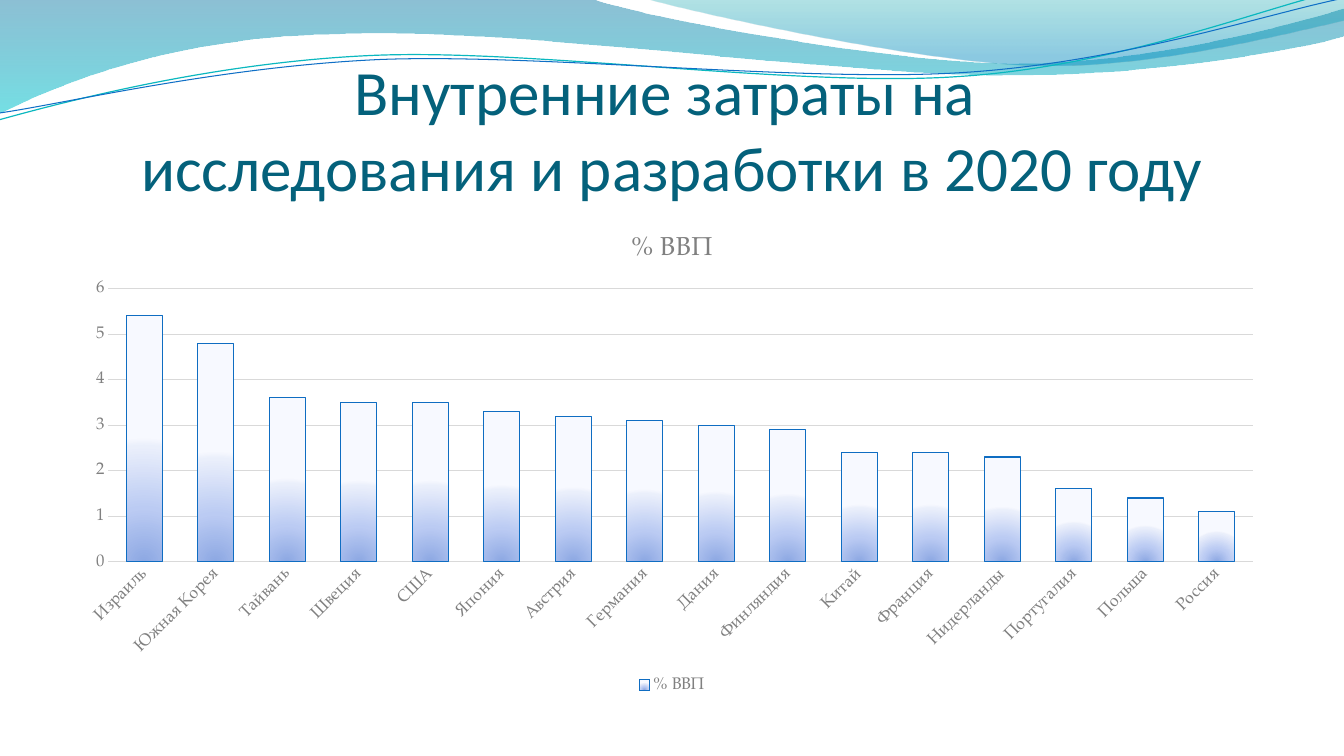
from dataclasses import dataclass
from typing import Optional

from lxml.etree import SubElement
from pptx import Presentation
from pptx.chart.data import CategoryChartData
from pptx.dml.color import RGBColor
from pptx.enum.chart import XL_CHART_TYPE as ChartType
from pptx.enum.chart import XL_LEGEND_POSITION as LegendPosition
from pptx.enum.chart import XL_TICK_MARK as TickMark
from pptx.enum.text import MSO_ANCHOR as Anchor
from pptx.enum.text import PP_ALIGN as Align
from pptx.oxml import parse_xml
from pptx.oxml.ns import nsdecls, qn
from pptx.util import Pt

Point = tuple[float, float]
CHART_FONT, LABEL_SIZE = "TeX Gyre Pagella", 11.97
GREY, PALE_GREY = "808080", "D9D9D9"
LINE_TILT = 357.3
LINEAR_DOWN = '<a:lin ang="5400000" scaled="0"/>'
FROM_BAR_FOOT = ('<a:path path="circle"><a:fillToRect l="50000" t="130000" '
                 'r="50000" b="-30000"/></a:path>')


@dataclass
class Stop:
    position: int
    color: str
    opacity: int = 100


@dataclass
class Wave:
    start: Point
    segments: list[tuple[Point, ...]]  # one point: straight; three points: cubic curve
    stops: Optional[list[Stop]] = None
    line_color: str = ""
    line_width: float = 0


WAVES = [
    Wave((-0.5, -0.5), [
        ((422.6, -0.7),),
        ((456.5, 12.2), (637.2, 45.4), (727.9, 45.4)),
        ((819.4, 45.4), (920.2, 18.7), (959.8, 6.5)),
        ((961.2, 25.9),),
        ((943.9, 31.7), (835.2, 54.7), (715.7, 54)),
        ((596.9, 54), (366.5, 20.2), (247, 24.5)),
        ((123.1, 25.9), (43.9, 59.8), (-0.7, 81.4)),
    ], stops=[Stop(0, "0074A1", 45), Stop(100, "00C6CF", 55)]),
    Wave((460.1, -0.7), [
        ((488.9, 7.9), (654.5, 44.6), (738, 46.8)),
        ((821.5, 49.7), (923, 23), (959.8, 15.1)),
        ((959.8, 0),),
    ], stops=[Stop(0, "00A1A9", 30), Stop(80, "008BBF", 45)]),
    Wave((-2.3, 63), [
        ((45.1, 52.3), (152.1, 29.2), (266, 29.6)),
        ((379.9, 29.9), (567.7, 66.9), (683.1, 64.4)),
        ((798.6, 62.6), (902.7, 25.7), (960.1, 15.5)),
    ], line_color="0AB8BF", line_width=0.85),
    Wave((-1.3, 58), [
        ((44.4, 53.7), (157.1, 32.3), (272.4, 32.7)),
        ((386.9, 33.8), (572.3, 63.4), (687, 61.6)),
        ((802.4, 59.8), (904.7, 30), (962.1, 21.2)),
    ], line_color="0F6FC6", line_width=0.75),
]

SPENDING = {
    "Израиль": 5.4, "Южная Корея": 4.8, "Тайвань": 3.6, "Швеция": 3.5,
    "США": 3.5, "Япония": 3.3, "Австрия": 3.2, "Германия": 3.1,
    "Дания": 3, "Финляндия": 2.9, "Китай": 2.4, "Франция": 2.4,
    "Нидерланды": 2.3, "Португалия": 1.6, "Польша": 1.4, "Россия": 1.1,
}
BAR_STOPS = [Stop(0, "8DA8E3"), Stop(43, "BBCBF3"), Stop(93, "EAEFFB"), Stop(100, "F7F9FF")]


def rgb(color: str) -> RGBColor:
    return RGBColor.from_string(color)


def set_font(font, name: str, size: float, color: str) -> None:
    font.name, font.size, font.bold = name, Pt(size), False
    font.color.rgb = rgb(color)


def set_line(line, color: str, width: float) -> None:
    line.color.rgb = rgb(color)
    line.width = Pt(width)


def set_gradient(fill, properties, stops: list[Stop], direction: str) -> None:
    """Swap a solid fill for a gradient with transparent stops."""
    fill.solid()
    stop_xml = "".join(
        f'<a:gs pos="{stop.position * 1000}"><a:srgbClr val="{stop.color}">'
        f'<a:alpha val="{stop.opacity * 1000}"/></a:srgbClr></a:gs>' for stop in stops)
    gradient = parse_xml(f'<a:gradFill {nsdecls("a")} rotWithShape="1">'
                         f'<a:gsLst>{stop_xml}</a:gsLst>{direction}</a:gradFill>')
    properties.replace(properties.find(qn("a:solidFill")), gradient)


def bend_segments(shape, segments: list[tuple[Point, ...]]) -> None:
    """Join each three line steps that belong to a curve into one cubic curve."""
    outline = next(shape._element.iter(qn("a:path")))
    steps = iter(outline.findall(qn("a:lnTo")))
    for segment in segments:
        group = [next(steps) for _ in segment]
        if len(group) == 3:
            curve = SubElement(outline, qn("a:cubicBezTo"))
            outline.replace(group[0], curve)
            for step in group:
                curve.append(step[0])
            for step in group[1:]:
                outline.remove(step)


def draw_wave(slide, wave: Wave) -> None:
    builder = slide.shapes.build_freeform(Pt(wave.start[0]), Pt(wave.start[1]))
    vertices = [(Pt(x), Pt(y)) for segment in wave.segments for x, y in segment]
    builder.add_line_segments(vertices, close=wave.stops is not None)
    shape = builder.convert_to_shape()
    bend_segments(shape, wave.segments)
    shape.shadow.inherit = False
    if wave.stops:
        set_gradient(shape.fill, shape._element.spPr, wave.stops, LINEAR_DOWN)
        shape.line.fill.background()
    else:
        shape.rotation = LINE_TILT
        shape.fill.background()
        set_line(shape.line, wave.line_color, wave.line_width)


def draw_title(slide) -> None:
    frame = slide.shapes.add_textbox(Pt(48), Pt(38.9), Pt(864), Pt(106.6)).text_frame
    frame.word_wrap = True
    frame.vertical_anchor = Anchor.BOTTOM
    frame.margin_left = frame.margin_right = frame.margin_bottom = 0
    frame.margin_top = Pt(3.6)
    frame.text = "Внутренние затраты на \vисследования и разработки в 2020 году"
    paragraph = frame.paragraphs[0]
    paragraph.alignment = Align.CENTER
    for run in paragraph.runs:
        set_font(run.font, "Calibri", 45, "04617B")


def draw_chart(slide) -> None:
    data = CategoryChartData()
    data.categories = list(SPENDING)
    data.add_series("% ВВП", list(SPENDING.values()))
    chart = slide.shapes.add_chart(ChartType.COLUMN_CLUSTERED, Pt(48), Pt(152.6),
                                   Pt(864), Pt(345.6), data).chart
    set_font(chart.font, CHART_FONT, 10, "000000")

    # Title and legend
    chart.has_title = True
    title_frame = chart.chart_title.text_frame
    title_frame.text = "% ВВП"
    set_font(title_frame.paragraphs[0].runs[0].font, CHART_FONT, 18.62, GREY)
    chart.has_legend = True
    chart.legend.position = LegendPosition.BOTTOM
    chart.legend.include_in_layout = False
    set_font(chart.legend.font, CHART_FONT, LABEL_SIZE, GREY)

    # Axes, with the label angle left automatic
    for axis in (chart.category_axis, chart.value_axis):
        axis.major_tick_mark = axis.minor_tick_mark = TickMark.NONE
        set_font(axis.tick_labels.font, CHART_FONT, LABEL_SIZE, GREY)
        label_body = axis._element.find(qn("c:txPr")).find(qn("a:bodyPr"))
        label_body.set("rot", "-60000000")
    set_line(chart.category_axis.format.line, PALE_GREY, 0.75)
    value_axis = chart.value_axis
    value_axis.format.line.fill.background()
    set_line(value_axis.major_gridlines.format.line, PALE_GREY, 0.75)

    # Bars
    plot = chart.plots[0]
    plot.gap_width, plot.overlap, plot.vary_by_categories = 100, -24, False
    series = plot.series[0]
    series.invert_if_negative = False
    set_gradient(series.format.fill, series._element.get_or_add_spPr(),
                 BAR_STOPS, FROM_BAR_FOOT)
    set_line(series.format.line, "0F6DC2", 0.75)


def main() -> None:
    presentation = Presentation()
    presentation.slide_width, presentation.slide_height = Pt(960), Pt(540)
    slide = presentation.slides.add_slide(presentation.slide_layouts[6])
    for wave in WAVES:
        draw_wave(slide, wave)
    draw_title(slide)
    draw_chart(slide)
    presentation.save("out.pptx")


if __name__ == "__main__":
    main()
